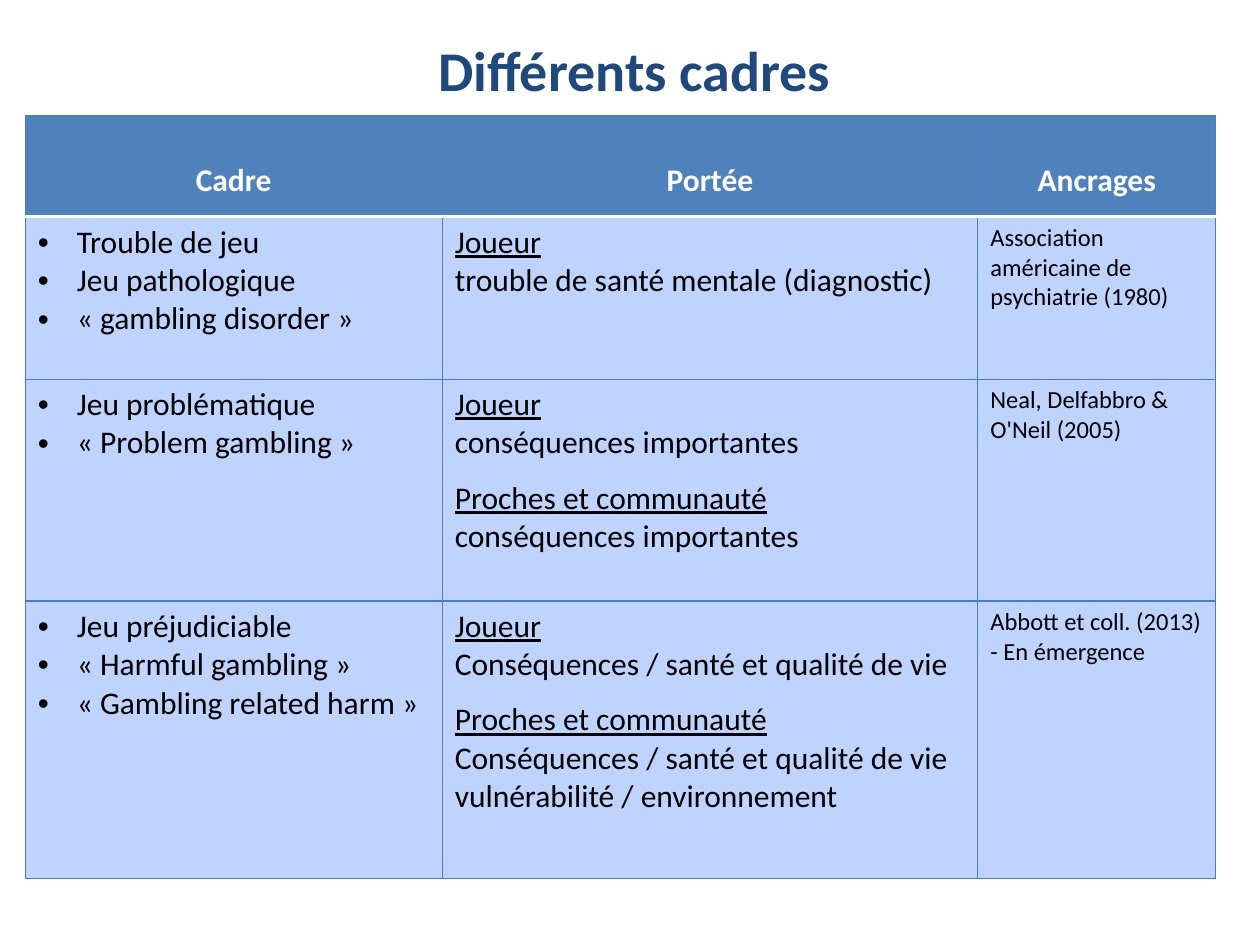
from lxml import etree
from pptx import Presentation
from pptx import util as u
from pptx.dml.color import RGBColor
from pptx.enum import text
from pptx.oxml import ns

FONT = "Calibri"
HEADER, GRID, BODY, INK, NAVY, WHITE = "4F81BD", "4B7EBC", "BFD3FF", "000000", "1F497D", "FFFFFF"
COLUMNS = [3.31, 4.25, 1.89]
ROWS = [0.8, 1.29, 1.76, 2.2]
HEADINGS = ["Cadre", "Portée", "Ancrages"]
PLAYER, CIRCLE = "Joueur", "Proches et communauté"
QUALITY = "Conséquences / santé et qualité de vie"
FRAMES = [
    (["Trouble de jeu", "Jeu pathologique", "« gambling disorder »"],
     [PLAYER, "trouble de santé mentale (diagnostic)"],
     ["Association américaine de psychiatrie (1980)"]),
    (["Jeu problématique", "« Problem gambling »"],
     [PLAYER, "conséquences importantes", CIRCLE, "conséquences importantes"],
     ["Neal, Delfabbro & O'Neil (2005)"]),
    (["Jeu préjudiciable", "« Harmful gambling »", "« Gambling related harm »"],
     [PLAYER, QUALITY, CIRCLE, QUALITY, "vulnérabilité / environnement"],
     ["Abbott et coll. (2013)", "- En émergence"]),
]


def color(value):
    return RGBColor.from_string(value)


def style(para, size, ink, bold=False):
    for span in para.runs:
        span.font.name = FONT
        span.font.size = u.Pt(size)
        span.font.bold = bold
        span.font.color.rgb = color(ink)


def add_bullet(para):
    properties = para._p.get_or_add_pPr()
    indent = u.Inches(0.31)
    properties.set("marL", str(indent))
    properties.set("indent", str(-indent))
    etree.SubElement(properties, ns.qn("a:buFont"), typeface="Arial")
    etree.SubElement(properties, ns.qn("a:buChar"), char="•")


def paint_cell(cell, fill, top=(GRID, 0.75), bottom=(GRID, 0.75)):
    properties = cell._tc.get_or_add_tcPr()
    side = (GRID, 0.75)
    for tag, (line, width) in zip(("lnL", "lnR", "lnT", "lnB"), (side, side, top, bottom)):
        border = etree.SubElement(properties, ns.qn(f"a:{tag}"), w=str(u.Pt(width)))
        solid = etree.SubElement(border, ns.qn("a:solidFill"))
        etree.SubElement(solid, ns.qn("a:srgbClr"), val=line)
    cell.fill.solid()
    cell.fill.fore_color.rgb = color(fill)


def write_cell(cell, lines, column):
    cell.text_frame.text = "\n".join(lines)
    for para in cell.text_frame.paragraphs:
        style(para, 14 if column == 2 else 18, INK)
        if column == 0:
            add_bullet(para)
        if para.text in (PLAYER, CIRCLE):
            para.runs[0].font.underline = True
        if para.text == CIRCLE:
            para.space_before = u.Pt(9.5)


def add_title(page, left, top, width, height):
    box = page.shapes.title
    box.left, box.top, box.width, box.height = map(u.Inches, (left, top, width, height))
    box.text_frame.text = "Différents cadres"
    box.text_frame.vertical_anchor = text.MSO_ANCHOR.MIDDLE
    para = box.text_frame.paragraphs[0]
    para.alignment = text.PP_ALIGN.CENTER
    style(para, 32, NAVY, True)


def add_frames_table(page, left, top):
    area = map(u.Inches, (left, top, sum(COLUMNS), sum(ROWS)))
    table = page.shapes.add_table(len(ROWS), len(COLUMNS), *area).table
    for column, width in zip(table.columns, COLUMNS):
        column.width = u.Inches(width)
    for row, height in zip(table.rows, ROWS):
        row.height = u.Inches(height)
    rule = (WHITE, 2)
    for index, heading in enumerate(HEADINGS):
        cell = table.cell(0, index)
        paint_cell(cell, HEADER, bottom=rule)
        cell.margin_top = u.Inches(0.36)
        cell.text_frame.text = heading
        para = cell.text_frame.paragraphs[0]
        para.alignment = text.PP_ALIGN.CENTER
        style(para, 18, WHITE, True)
    for row, frame in enumerate(FRAMES, 1):
        for column, lines in enumerate(frame):
            cell = table.cell(row, column)
            paint_cell(cell, BODY, top=rule if row == 1 else (GRID, 0.75))
            write_cell(cell, lines, column)


def main():
    deck = Presentation()
    deck.slide_width, deck.slide_height = u.Inches(10), u.Inches(7.5)
    page = deck.slides.add_slide(deck.slide_layouts[5])
    add_frames_table(page, 0.2, 0.92)
    add_title(page, 2.32, 0.23, 5.43, 0.64)
    deck.save("out.pptx")


if __name__ == "__main__":
    main()
